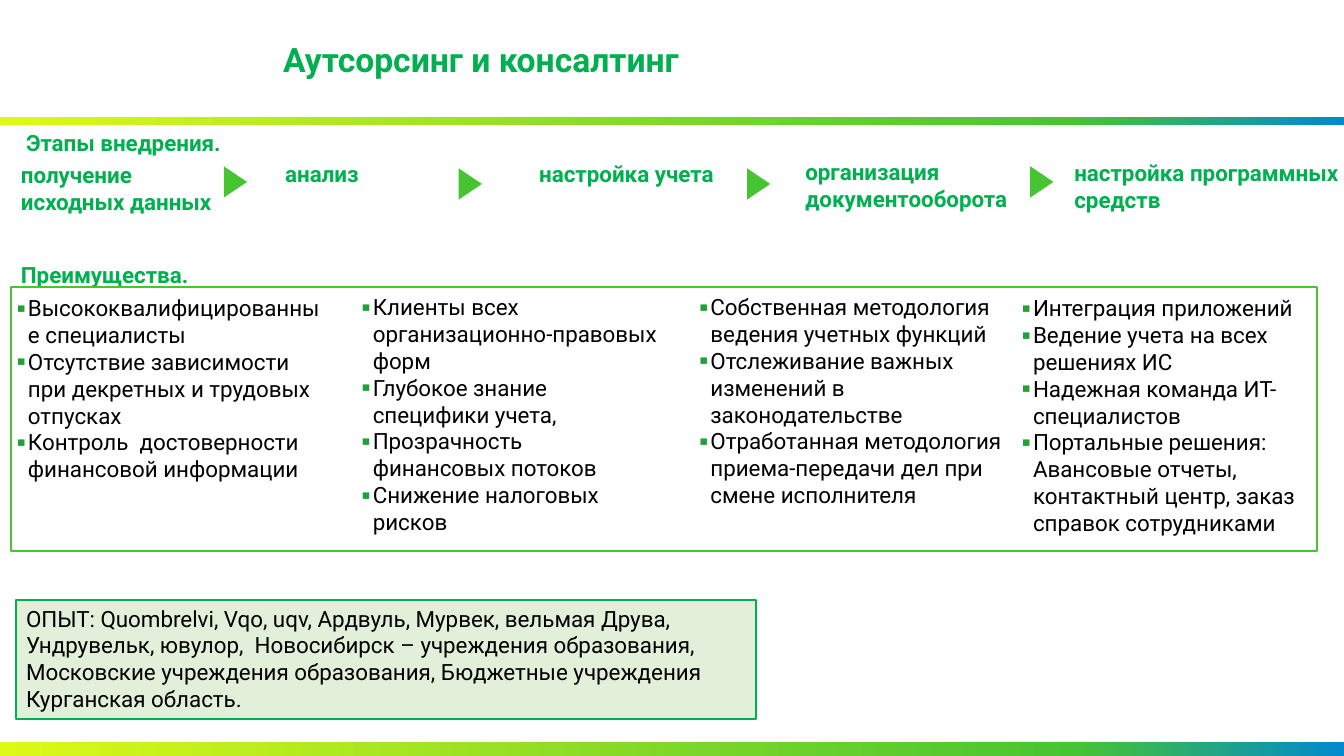
from copy import deepcopy

from lxml import etree
from pptx import Presentation
from pptx.dml.color import RGBColor
from pptx.enum.shapes import MSO_SHAPE
from pptx.enum.text import MSO_ANCHOR, PP_ALIGN
from pptx.oxml.ns import qn
from pptx.util import Inches, Pt

RECT = MSO_SHAPE.RECTANGLE
ROUND = MSO_SHAPE.ROUNDED_RECTANGLE
TRIANGLE = MSO_SHAPE.ISOSCELES_TRIANGLE
LEFT = PP_ALIGN.LEFT
TOP = MSO_ANCHOR.TOP

FONT = "Roboto"
GREEN, LIME, PALE = "00B050", "46C432", "E2F0D9"
BLACK, MARK = "000000", "20A138"
FADE = [(0, "DEF918"), (0.8, LIME), (1, "0189CF")]

# Places are left, top, width, height in percent of the slide.
BARS = [(ROUND, (0, 15.47, 100, 1.07)), (RECT, (0, 98.13, 100, 1.87))]
HEADS = [
    ("Аутсорсинг и консалтинг", 24, (20.33, 4.53, 52.65, 6.67)),
    ("Этапы внедрения.", 16, (1.2, 16.4, 75.23, 4.93)),
    ("Преимущества.", 16, (0.82, 33.87, 65.85, 4.93)),
]
STEPS = [
    ("получение \nисходных данных", (0.82, 20.67, 17.18, 8.53)),
    ("анализ", (20.48, 20.53, 8.78, 4.93)),
    ("настройка учета", (39.38, 20.53, 15.3, 4.93)),
    ("организация документооборота", (59.18, 20.27, 19.13, 8.53)),
    ("настройка программных средств", (79.2, 20.4, 22.5, 8.53)),
]
ARROWS = [(16.35, 22.53), (33.83, 22.8), (55.28, 22.8), (76.35, 22.53)]
ARROW_SIZE = (2.33, 3.07)
GAINS = [
    ((-0.98, 38.27, 25.65, 33.6), [
        "Высококвалифицированные специалисты",
        "Отсутствие зависимости при декретных и трудовых отпусках",
        "Контроль  достоверности финансовой информации",
    ]),
    ((24.68, 38.13, 25.2, 33.6), [
        "Клиенты всех организационно-правовых форм",
        "Глубокое знание специфики учета,",
        "Прозрачность финансовых потоков",
        "Снижение налоговых рисков",
    ]),
    ((49.8, 38.13, 25.5, 37.2), [
        "Собственная методология ведения учетных функций",
        "Отслеживание важных изменений в законодательстве",
        "Отработанная методология приема-передачи дел при смене исполнителя",
    ]),
    ((73.8, 38.27, 24.15, 33.6), [
        "Интеграция приложений",
        "Ведение учета на всех решениях ИС",
        "Надежная команда ИТ-специалистов",
        "Портальные решения: Авансовые отчеты, контактный центр, "
        "заказ справок сотрудниками",
    ]),
]
FRAME = (0.82, 38, 97.2, 34.93)
NOTE = (
    "ОПЫТ: Quombrelvi, Vqo, uqv, Ардвуль, Мурвек, вельмая Друва, "
    "Ундрувельк, ювулор,  Новосибирск – учреждения образования, "
    "Московские учреждения образования, Бюджетные учреждения  "
    "Курганская область."
)
NOTE_BOX = (1.2, 79.33, 55.05, 15.73)

deck = Presentation()
deck.slide_width, deck.slide_height = Inches(13.33), Inches(7.5)
slide = deck.slides.add_slide(deck.slide_layouts[6])


def color(code):
    return RGBColor.from_string(code)


def place(box):
    """Turn percent shares into slide lengths."""
    sides = (deck.slide_width, deck.slide_height) * 2
    return [int(side * part / 100) for side, part in zip(sides, box)]


def add_form(kind, box, fill=None, line=None):
    form = slide.shapes.add_shape(kind, *place(box))
    form.shadow.inherit = False
    if fill:
        form.fill.solid()
        form.fill.fore_color.rgb = color(fill)
    else:
        form.fill.background()
    if line:
        form.line.color.rgb = color(line)
        form.line.width = Pt(1.5)
    else:
        form.line.fill.background()
    return form


def fade(form):
    form.fill.gradient()
    form.fill.gradient_angle = 0
    first = form._element.spPr.find(".//" + qn("a:gs"))
    first.addnext(deepcopy(first))
    for stop, (spot, code) in zip(form.fill.gradient_stops, FADE):
        stop.position = spot
        stop.color.rgb = color(code)


def add_bullet(para):
    props = para._p.get_or_add_pPr()
    props.set("marL", str(Inches(0.31)))
    props.set("indent", str(Inches(-0.11)))
    tint = etree.SubElement(props, qn("a:buClr"))
    etree.SubElement(tint, qn("a:srgbClr"), val=MARK)
    etree.SubElement(props, qn("a:buFont"), typeface=FONT)
    etree.SubElement(props, qn("a:buChar"), char="▪")


def write(form, lines, size=16, code=BLACK, bold=False, bullet=False):
    frame = form.text_frame
    frame.word_wrap = True
    frame.vertical_anchor = TOP
    for num, line in enumerate(lines):
        para = frame.paragraphs[0] if num == 0 else frame.add_paragraph()
        para.alignment = LEFT
        if bullet:
            add_bullet(para)
        for row, part in enumerate(line.split("\n")):
            if row:
                para.add_line_break()
            run = para.add_run()
            run.text = part
            run.font.name = FONT
            run.font.size = Pt(size)
            run.font.bold = bold
            run.font.color.rgb = color(code)


def add_text(box, lines, **style):
    write(slide.shapes.add_textbox(*place(box)), lines, **style)


for kind, box in BARS:
    fade(add_form(kind, box))
for text, size, box in HEADS:
    add_text(box, [text], size=size, code=GREEN, bold=True)
for text, box in STEPS:
    add_text(box, [text], code=GREEN, bold=True)
for spot in ARROWS:
    add_form(TRIANGLE, spot + ARROW_SIZE, LIME).rotation = 90
for box, lines in GAINS:
    add_text(box, lines, bullet=True)
add_form(RECT, FRAME, line=LIME)
write(add_form(RECT, NOTE_BOX, PALE, GREEN), [NOTE])

deck.save("out.pptx")
